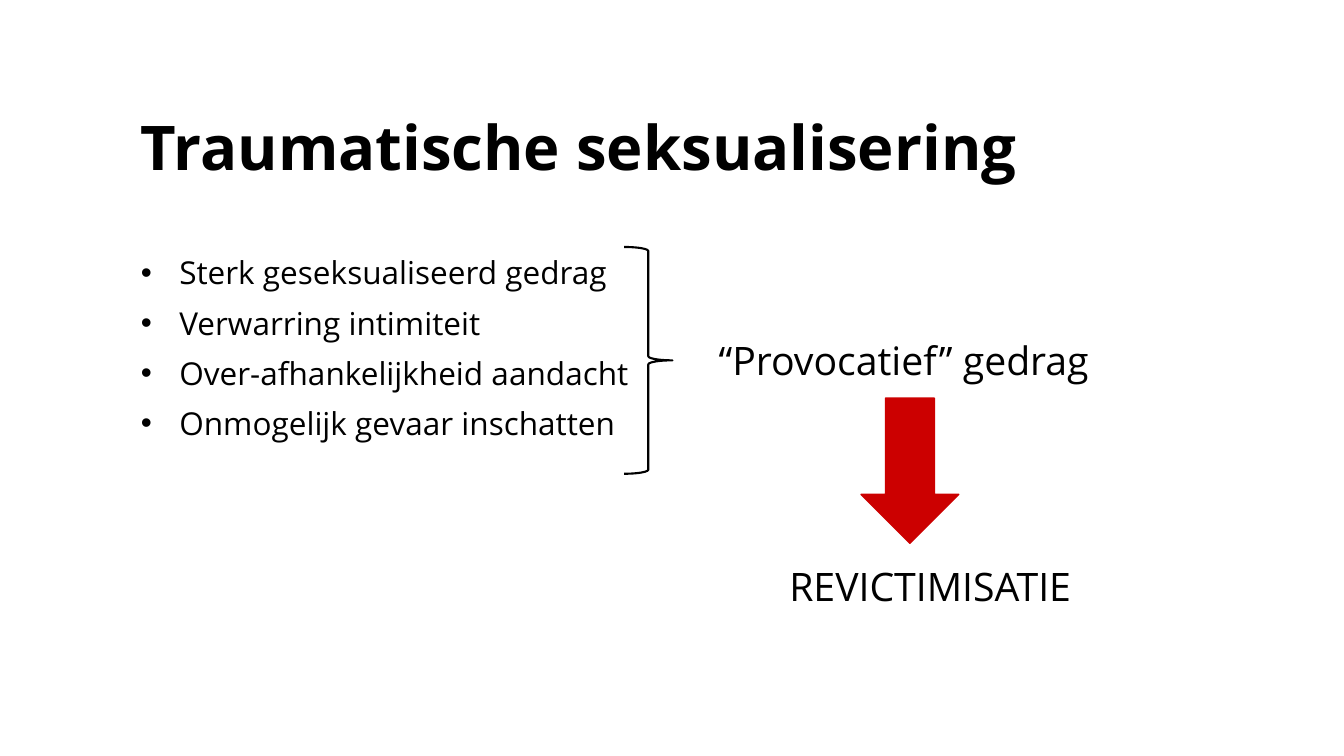
"""Build the slide on traumatic sexualisation and revictimisation."""
from dataclasses import dataclass

from lxml.etree import SubElement
from pptx import Presentation
from pptx.dml.color import RGBColor
from pptx.enum.shapes import MSO_SHAPE
from pptx.enum.text import MSO_ANCHOR
from pptx.oxml.ns import qn
from pptx.slide import Slide
from pptx.util import Inches, Pt

COLORS = {"text": "000000", "arrow": "CC0000"}
FONT = "Open Sans"
BULLET_INDENT = Inches(0.38)


@dataclass
class Box:
    left: float
    top: float
    width: float
    height: float

    def lengths(self) -> list[Inches]:
        return [Inches(value) for value in (self.left, self.top, self.width, self.height)]


@dataclass
class Symbol:
    kind: MSO_SHAPE
    box: Box
    line_color: str
    line_width: float
    fill_color: str | None = None


SYMPTOMS = [
    "Sterk geseksualiseerd gedrag",
    "Verwarring intimiteit",
    "Over-afhankelijkheid aandacht",
    "Onmogelijk gevaar inschatten",
]
SYMBOLS = [
    Symbol(MSO_SHAPE.RIGHT_BRACE, Box(6.19, 2.45, 0.48, 2.25), "text", 1.5),
    Symbol(MSO_SHAPE.DOWN_ARROW, Box(8.54, 3.95, 0.97, 1.44), "arrow", 1, "arrow"),
]
OUTCOMES = {
    "“Provocatief” gedrag": Box(7.03, 3.29, 4.64, 0.57),
    "REVICTIMISATIE": Box(7.73, 5.53, 3.02, 0.57),
}


def add_text(slide: Slide, lines: list[str], box: Box, *, size: float,
             bold: bool = False, bullet: bool = False, line_spacing: float = 1.0,
             anchor: MSO_ANCHOR = MSO_ANCHOR.TOP) -> None:
    text_frame = slide.shapes.add_textbox(*box.lengths()).text_frame
    text_frame.word_wrap = True
    text_frame.vertical_anchor = anchor
    for index, line in enumerate(lines):
        paragraph = text_frame.paragraphs[0] if index == 0 else text_frame.add_paragraph()
        paragraph.text = line
        paragraph.line_spacing = line_spacing
        if bullet:
            properties = paragraph._p.get_or_add_pPr()
            properties.set("marL", str(BULLET_INDENT))
            properties.set("indent", str(-BULLET_INDENT))
            SubElement(properties, qn("a:buFont"), typeface="Arial")
            SubElement(properties, qn("a:buChar"), char="•")
        font = paragraph.runs[0].font
        font.name = FONT
        font.size = Pt(size)
        font.bold = bold
        font.color.rgb = RGBColor.from_string(COLORS["text"])


def add_symbol(slide: Slide, symbol: Symbol) -> None:
    shape = slide.shapes.add_shape(symbol.kind, *symbol.box.lengths())
    shape.shadow.inherit = False
    shape.line.color.rgb = RGBColor.from_string(COLORS[symbol.line_color])
    shape.line.width = Pt(symbol.line_width)
    if symbol.fill_color:
        shape.fill.solid()
        shape.fill.fore_color.rgb = RGBColor.from_string(COLORS[symbol.fill_color])
    else:
        shape.fill.background()


def main() -> None:
    presentation = Presentation()
    presentation.slide_width = Inches(13.33)
    presentation.slide_height = Inches(7.5)
    slide = presentation.slides.add_slide(presentation.slide_layouts[6])
    add_text(slide, ["Traumatische seksualisering"], Box(1.3, 0.72, 10.73, 1.15),
             size=44, bold=True, line_spacing=0.9, anchor=MSO_ANCHOR.BOTTOM)
    add_text(slide, SYMPTOMS, Box(1.3, 2.34, 10.73, 4.27),
             size=22.5, bullet=True, line_spacing=1.33)
    for symbol in SYMBOLS:
        add_symbol(slide, symbol)
    for label, box in OUTCOMES.items():
        add_text(slide, [label], box, size=28)
    presentation.save("out.pptx")


if __name__ == "__main__":
    main()
